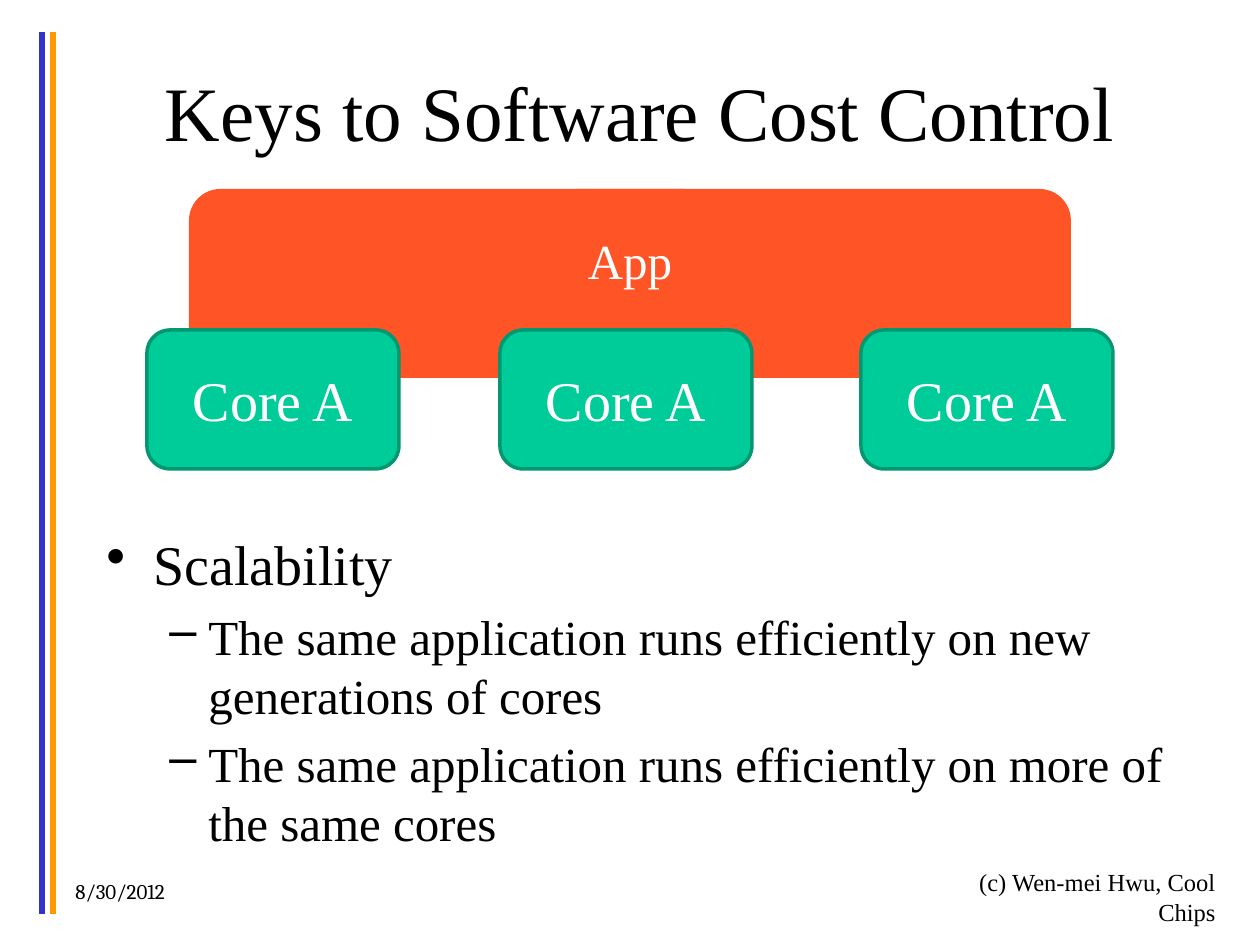
from lxml import etree
from pptx import Presentation
from pptx.dml.color import RGBColor
from pptx.enum import shapes, text
from pptx.oxml import ns
from pptx import util as u

SCALE = 914400 / 126
SERIF = "Times New Roman"
COLORS = {
    "blue": "3333CC", "amber": "FF9900", "app": "FF5425",
    "core": "00CC99", "core_line": "009771", "ink": "000000", "white": "FFFFFF",
}
LEFT, CENTER, RIGHT = text.PP_ALIGN.LEFT, text.PP_ALIGN.CENTER, text.PP_ALIGN.RIGHT
TOP, MIDDLE = text.MSO_ANCHOR.TOP, text.MSO_ANCHOR.MIDDLE


def px(n):
    """Turn px into EMU."""
    return u.Emu(round(n * SCALE))


def rgb(name):
    """Look up a colour by name."""
    return RGBColor.from_string(COLORS[name])


def style(p, size, color="ink", align=LEFT, font=SERIF):
    """Set the font and alignment of a paragraph."""
    p.alignment = align
    p.font.size, p.font.name = u.Pt(size), font
    p.font.color.rgb = rgb(color)


def add_text(slide, box, words, size, align=LEFT, anchor=TOP, font=SERIF):
    """Place a one-paragraph text box."""
    tf = slide.shapes.add_textbox(*map(px, box)).text_frame
    tf.word_wrap, tf.vertical_anchor = True, anchor
    p = tf.paragraphs[0]
    p.text = words
    style(p, size, align=align, font=font)


def add_block(slide, box, fill, line=None):
    """Place a rounded block and return its text frame."""
    sp = slide.shapes.add_shape(shapes.MSO_SHAPE.ROUNDED_RECTANGLE, *map(px, box))
    sp.shadow.inherit = False
    sp.fill.solid()
    sp.fill.fore_color.rgb = rgb(fill)
    if line:
        sp.line.color.rgb = rgb(line)
        sp.line.width = u.Pt(2)
    else:
        sp.line.fill.background()
    tf = sp.text_frame
    tf.word_wrap, tf.vertical_anchor = True, MIDDLE
    return tf


def add_rails(slide, box):
    """Draw the two vertical rails at the sides of the box."""
    x, y, w, h = box
    for left, color in ((x, "blue"), (x + w, "amber")):
        rail = slide.shapes.add_connector(
            shapes.MSO_CONNECTOR.STRAIGHT, px(left), px(y), px(left), px(y + h))
        rail.line.color.rgb = rgb(color)
        rail.line.width = u.Pt(3)
        etree.SubElement(rail._element.spPr, ns.qn("a:effectLst"))


def add_diagram(slide, box):
    """Draw one application spanning three cores."""
    x, y, w, h = box
    add_block(slide, (x + 42, y, w - 84, 189), "app")
    tf = add_block(slide, (x + 404, y, 158, 189), "app")
    tf.text = "App"
    style(tf.paragraphs[0], 28, "white", CENTER)
    style(tf.paragraphs[0], 28, "white", CENTER)
    tf.margin_bottom = px(54)
    for left in (0, 353, 714):
        tf = add_block(slide, (x + left, y + h - 139, 252, 139), "core", "core_line")
        tf.text = "Core A"
        style(tf.paragraphs[0], 32, "white", CENTER)


def add_bullets(slide, box, items):
    """Place a two-level bullet list."""
    levels = (("•", 32, 47, 47), ("–", 28, 102, 39))
    tf = slide.shapes.add_textbox(*map(px, box)).text_frame
    tf.word_wrap = True
    for i, (level, words) in enumerate(items):
        mark, size, margin, hang = levels[level]
        p = tf.add_paragraph() if i else tf.paragraphs[0]
        p.text, p.level = words, level
        p.space_before = u.Pt(size * 0.2)
        style(p, size)
        pPr = p._p.get_or_add_pPr()
        pPr.set("marL", str(px(margin)))
        pPr.set("indent", str(-px(hang)))
        bullet = etree.Element(ns.qn("a:buChar"), char=mark)
        pPr.find(ns.qn("a:defRPr")).addprevious(bullet)


def add_footer(slide, box):
    """Place the date at the left and the credit at the right."""
    x, y, w, h = box
    add_text(slide, (x, y + 11, 483, h), "8/30/2012", 12, font="Cambria")
    add_text(slide, (x + w - 262, y, 262, h), "(c) Wen-mei Hwu, Cool Chips", 14, RIGHT)


def main():
    """Build and save the slide."""
    prs = Presentation()
    prs.slide_width, prs.slide_height = px(1260), px(945)
    slide = prs.slides.add_slide(prs.slide_layouts[6])
    add_rails(slide, (42, 32, 11, 882))
    add_text(slide, (94, 32, 1092, 158), "Keys to Software Cost Control", 44, CENTER, MIDDLE)
    add_diagram(slide, (147, 189, 966, 280))
    add_bullets(slide, (94, 523, 1092, 317), (
        (0, "Scalability"),
        (1, "The same application runs efficiently on new generations of cores"),
        (1, "The same application runs efficiently on more of the same cores"),
    ))
    add_footer(slide, (63, 861, 1165, 63))
    prs.save("out.pptx")


if __name__ == "__main__":
    main()
